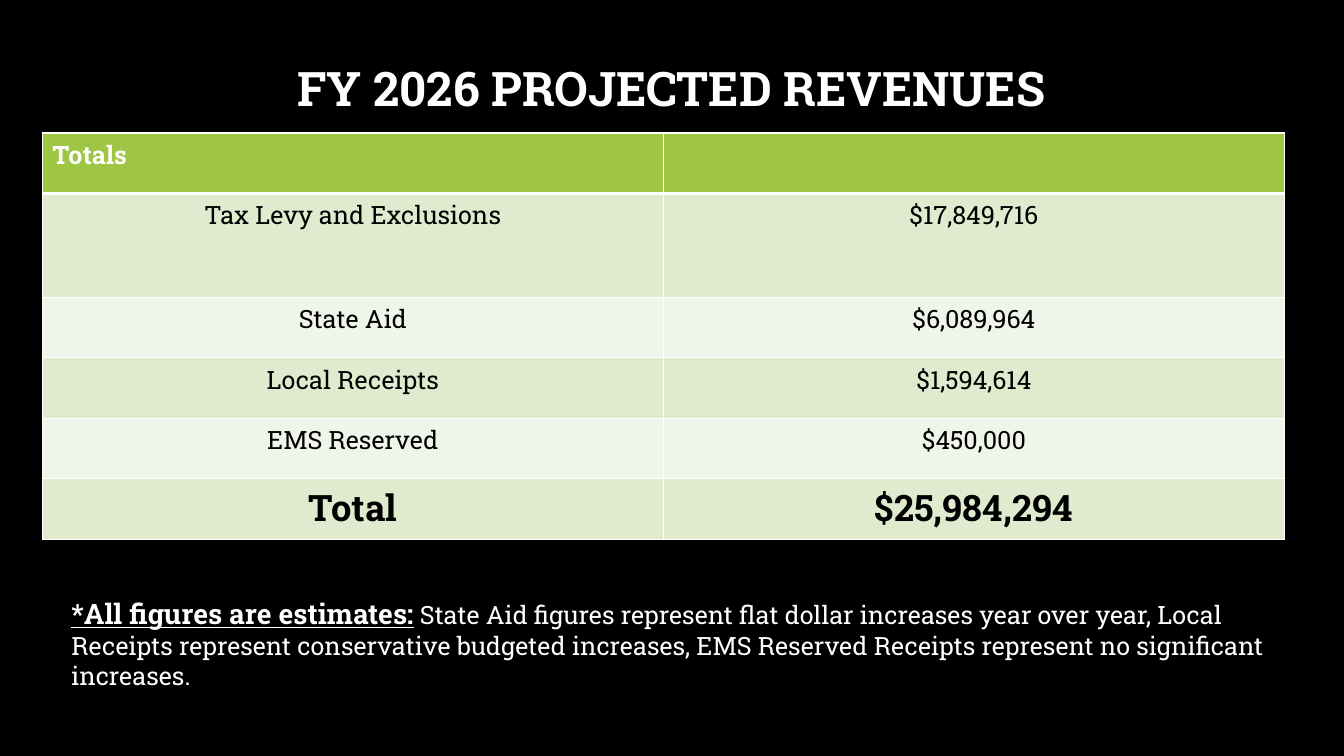
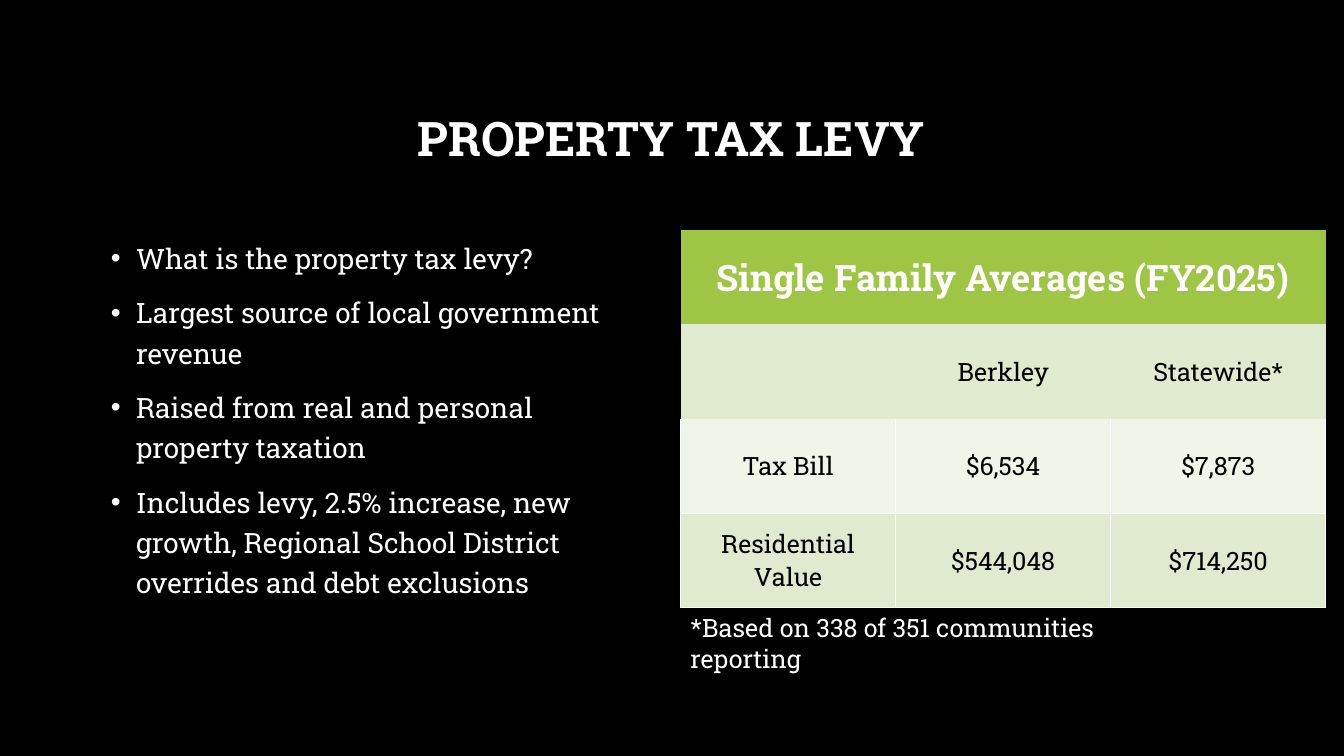
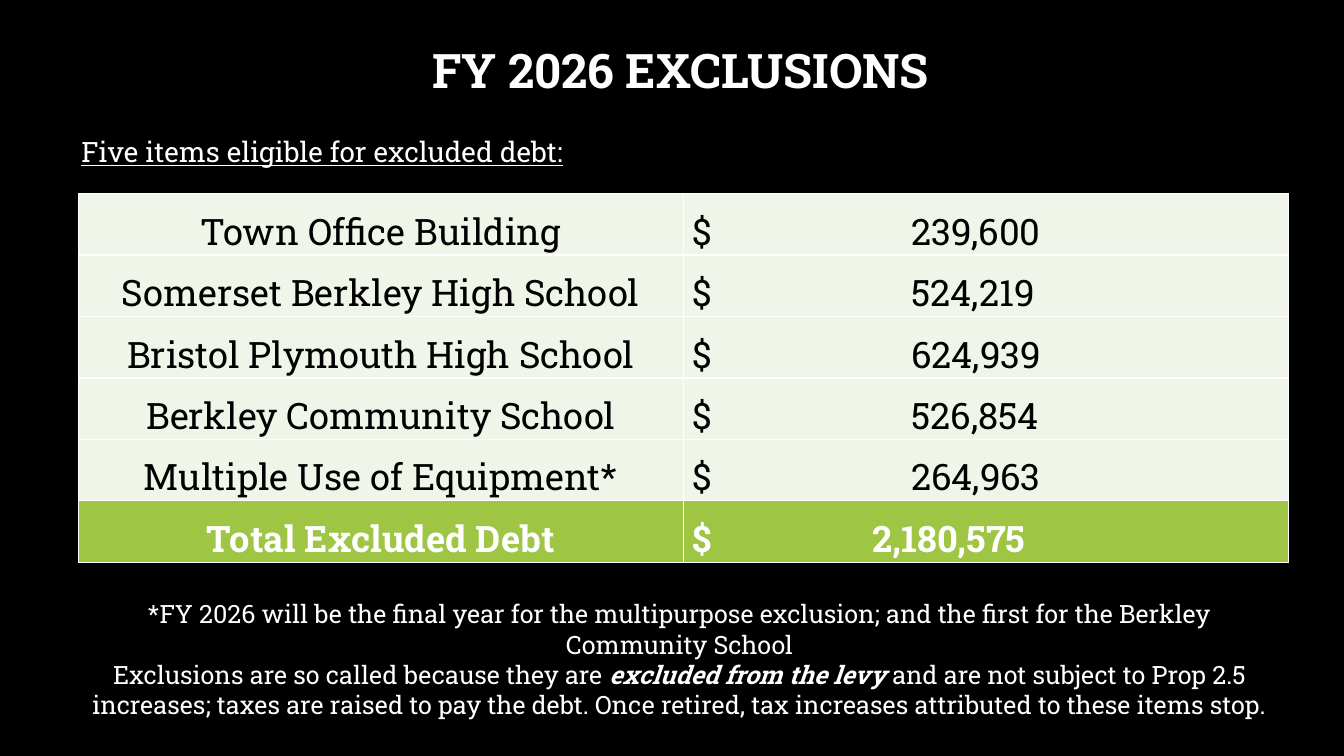
from lxml import etree
from pptx import Presentation
from pptx.dml.color import RGBColor
from pptx.enum import text
from pptx.oxml import ns
from pptx.util import Inches, Pt

COLORS = {
    "black": "000000",
    "white": "FFFFFF",
    "green": "9EC544",
    "band": "DFEACF",
    "pale": "F0F5E9",
}
FONT = "Roboto Slab"
NO_GRID_STYLE = "{2D5ABB26-0587-4C30-8999-92F81FD0307C}"
CENTER = text.PP_ALIGN.CENTER
TOP, MIDDLE, BOTTOM = text.MSO_ANCHOR.TOP, text.MSO_ANCHOR.MIDDLE, text.MSO_ANCHOR.BOTTOM


def write(paragraph, runs, color="white", align=None, size=18):
    """Fill a paragraph with (text, font attributes) pairs."""
    paragraph.alignment = align
    for words, changes in runs:
        run = paragraph.add_run()
        run.text = words
        run.font.color.rgb = RGBColor.from_string(COLORS[color])
        font_format = {"name": FONT, "size": Pt(size), "bold": False, **changes}
        for attribute, value in font_format.items():
            setattr(run.font, attribute, value)


def style_cell(cell, fill, anchor, borders):
    """Give a cell its fill, anchor and white borders (side: points)."""
    cell.vertical_anchor = anchor
    properties = cell._tc.get_or_add_tcPr()
    for side, points in borders.items():
        line = etree.SubElement(properties, ns.qn(f"a:ln{side}"), w=str(Pt(points)))
        solid = etree.SubElement(line, ns.qn("a:solidFill"))
        etree.SubElement(solid, ns.qn("a:srgbClr"), val=COLORS["white"])
    cell.fill.solid()
    cell.fill.fore_color.rgb = RGBColor.from_string(COLORS[fill])


presentation = Presentation()
presentation.slide_width = Inches(13.33)
presentation.slide_height = Inches(7.5)

# Shared black background
background = presentation.slide_master.background.fill
background.solid()
background.fore_color.rgb = RGBColor.from_string(COLORS["black"])

# Slides with their titles: layout, title, left, top
slides = []
for layout, title, left, top in [
    (5, "FY 2026 PROJECTED REVENUES", 1, 0.18),
    (1, "PROPERTY TAX LEVY", 1, 0.67),
    (5, "FY 2026 EXCLUSIONS", 1.09, 0),
]:
    slide = presentation.slides.add_slide(presentation.slide_layouts[layout])
    shape = slide.shapes.title
    shape.left, shape.top = Inches(left), Inches(top)
    shape.width, shape.height = Inches(11.32), Inches(1.45)
    shape.text_frame.vertical_anchor = MIDDLE
    shape.text_frame.auto_size = text.MSO_AUTO_SIZE.NONE
    paragraph = shape.text_frame.paragraphs[0]
    paragraph.line_spacing = 0.9
    write(paragraph, [(title, {"bold": True})], align=CENTER, size=34)
    slides.append(slide)
revenue_slide, levy_slide, exclusion_slide = slides

# Empty tables: slide, rows, columns, left, top, width, height
tables = []
for slide, rows, columns, *box in [
    (revenue_slide, 6, 2, 0.42, 1.32, 12.32, 4.03),
    (levy_slide, 4, 3, 6.75, 2.28, 6.4, 3.75),
    (exclusion_slide, 6, 2, 0.78, 1.92, 12, 3.66),
]:
    frame = slide.shapes.add_table(rows, columns, *map(Inches, box))
    frame.element.find(f".//{ns.qn('a:tableStyleId')}").text = NO_GRID_STYLE
    frame.table.first_row = frame.table.horz_banding = False
    tables.append(frame.table)
revenue_table, levy_table, exclusion_table = tables
GRID = dict.fromkeys("LRTB", 1)

# Revenue table
revenues = [
    ("Totals", ""),
    ("Tax Levy and Exclusions", "$17,849,716"),
    ("State Aid", "$6,089,964"),
    ("Local Receipts", "$1,594,614"),
    ("EMS Reserved", "$450,000"),
    ("Total", "$25,984,294"),
]
for row, values in enumerate(revenues):
    header, total = row == 0, row == len(revenues) - 1
    revenue_table.rows[row].height = Inches(1.03 if row == 1 else 0.6)
    fill = "green" if header else "band" if row % 2 else "pale"
    borders = {**GRID, "B": 3} if header else {**GRID, "T": 3} if row == 1 else GRID
    for column, value in enumerate(values):
        cell = revenue_table.cell(row, column)
        style_cell(cell, fill, TOP, borders)
        if value:
            write(cell.text_frame.paragraphs[0], [(value, {"bold": header or total})],
                  color="white" if header else "black",
                  align=None if header else CENTER, size=26 if total else 18)

# Levy questions
body = levy_slide.placeholders[1]
body.left, body.top, body.width, body.height = map(Inches, (1, 2.28, 5.58, 4.05))
body.text_frame.auto_size = text.MSO_AUTO_SIZE.NONE
for index, point in enumerate([
    "What is the property tax levy?",
    "Largest source of local government revenue",
    "Raised from real and personal property taxation",
    "Includes levy, 2.5% increase, new growth, Regional School District "
    "overrides and debt exclusions",
]):
    frame = body.text_frame
    paragraph = frame.add_paragraph() if index else frame.paragraphs[0]
    paragraph.line_spacing, paragraph.space_before = 1.2, Pt(10)
    write(paragraph, [(point, {})], size=20)
    properties = paragraph._p.get_or_add_pPr()
    properties.set("marL", str(Inches(0.25)))
    properties.set("indent", str(-Inches(0.25)))
    etree.SubElement(properties, ns.qn("a:buChar"), char="•")

# Single family table
averages = [
    ("Single Family Averages (FY2025)", "", ""),
    ("", "Berkley", "Statewide*"),
    ("Tax Bill", "$6,534", "$7,873"),
    ("Residential Value", "$544,048", "$714,250"),
]
levy_table.cell(0, 0).merge(levy_table.cell(0, 2))
for row, values in enumerate(averages):
    header = row == 0
    fill = "green" if header else "band" if row % 2 else "pale"
    borders = [{}, {}, dict.fromkeys("LRB", 1), GRID][row]
    for column, value in enumerate(values):
        cell = levy_table.cell(row, column)
        style_cell(cell, fill, MIDDLE, borders)
        if value:
            write(cell.text_frame.paragraphs[0], [(value, {"bold": header})],
                  color="white" if header else "black",
                  align=CENTER, size=26 if header else 18)

# Exclusion table: amounts stand at a tab stop after the dollar sign
exclusions = [
    ("Town Office Building", "239,600"),
    ("Somerset Berkley High School", "524,219"),
    ("Bristol Plymouth High School", "624,939"),
    ("Berkley Community School", "526,854"),
    ("Multiple Use of Equipment*", "264,963"),
    ("Total Excluded Debt", "2,180,575"),
]
for row, (item, amount) in enumerate(exclusions):
    total = row == len(exclusions) - 1
    for column, value in enumerate((item, f"$\t{amount}")):
        cell = exclusion_table.cell(row, column)
        cell.margin_left = Inches(0.09 if column else 0.01)
        cell.margin_top = cell.margin_right = Inches(0.01)
        cell.margin_bottom = 0
        style_cell(cell, "green" if total else "pale", BOTTOM, GRID)
        paragraph = cell.text_frame.paragraphs[0]
        write(paragraph, [(value, {"bold": total})], color="white" if total else "black",
              align=None if column else CENTER, size=26)
        if column:
            stops = etree.SubElement(paragraph._p.get_or_add_pPr(), ns.qn("a:tabLst"))
            etree.SubElement(stops, ns.qn("a:tab"), algn="l",
                             pos=str(Inches(1.78 if total else 2.17)))

# Notes around the tables: slide, box, alignment, paragraphs of runs
strong = {"bold": True, "italic": True}
for slide, box, align, paragraphs in [
    (revenue_slide, (0.61, 5.87, 12.27, 1.04), None, [[
        ("*All figures are estimates:", {"size": Pt(20), "bold": True, "underline": True}),
        (" State Aid figures represent flat dollar increases year over year, Local "
         "Receipts represent conservative budgeted increases, EMS Reserved Receipts "
         "represent no significant increases.", {}),
    ]]),
    (levy_slide, (6.75, 6.03, 5.3, 0.7), None, [[
        ("*Based on 338 of 351 communities reporting", {}),
    ]]),
    (exclusion_slide, (0.71, 1.29, 12.05, 0.44), None, [[
        ("Five items eligible for excluded debt:", {"size": Pt(20), "underline": True}),
    ]]),
    (exclusion_slide, (0.78, 5.89, 11.92, 1.31), CENTER, [
        [("*FY 2026 will be the final year for the multipurpose exclusion; and the "
          "first for the Berkley Community School", {})],
        [("Exclusions are so called because they are ", {}),
         ("excluded from the levy ", strong),
         ("and are not subject to Prop 2.5 increases; taxes are raised to pay the debt. "
          "Once retired, tax increases attributed to these items stop.", {})],
    ]),
]:
    frame = slide.shapes.add_textbox(*map(Inches, box)).text_frame
    frame.word_wrap = True
    for index, runs in enumerate(paragraphs):
        paragraph = frame.add_paragraph() if index else frame.paragraphs[0]
        write(paragraph, runs, align=align)

presentation.save("out.pptx")
